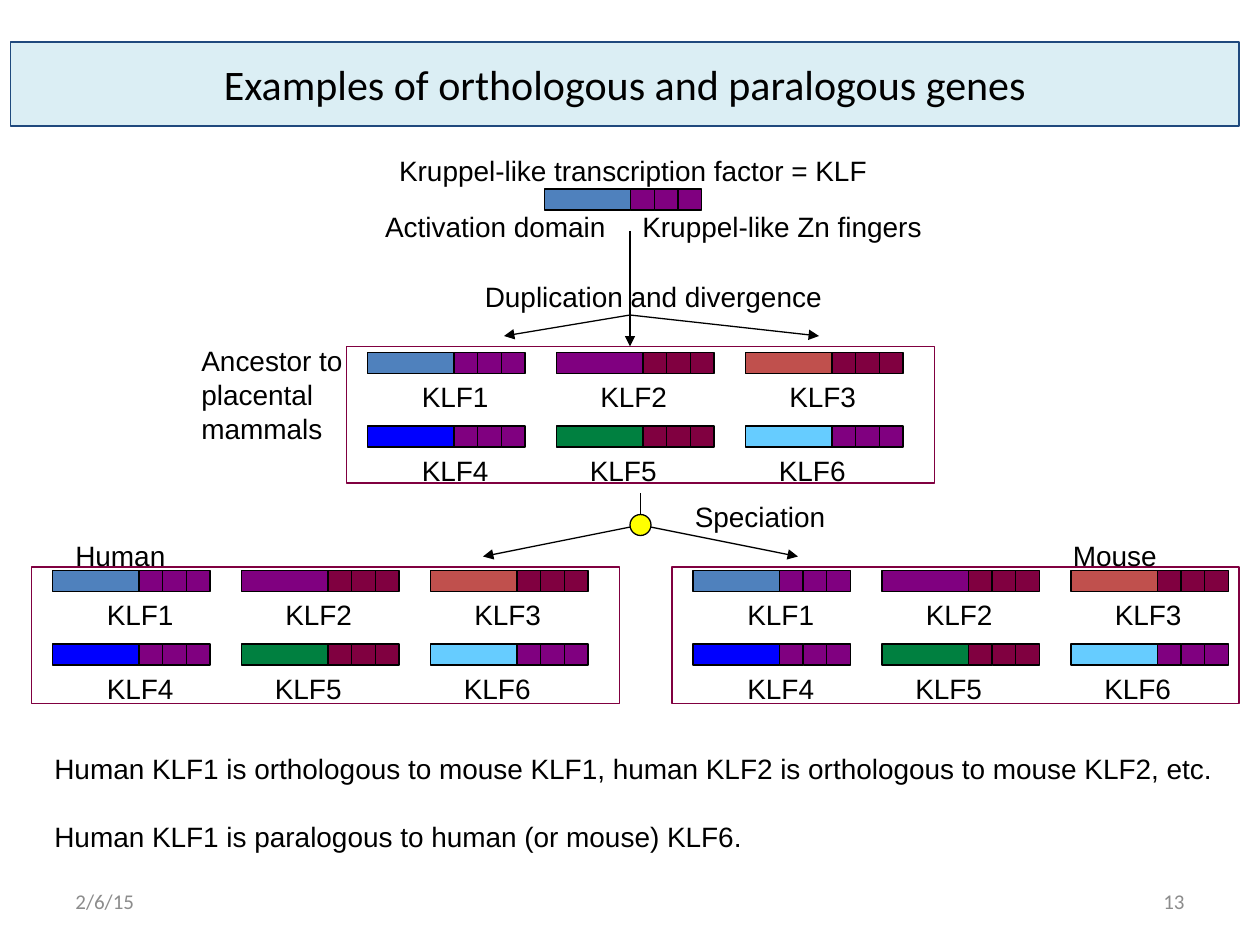
from dataclasses import dataclass

from lxml import etree
from pptx import Presentation
from pptx.dml.color import RGBColor
from pptx.enum.shapes import MSO_CONNECTOR, MSO_SHAPE
from pptx.enum.text import MSO_ANCHOR, PP_ALIGN
from pptx.oxml.ns import qn
from pptx.util import Pt

RECTANGLE = MSO_SHAPE.RECTANGLE
OVAL = MSO_SHAPE.OVAL
STRAIGHT = MSO_CONNECTOR.STRAIGHT
TOP, MIDDLE = MSO_ANCHOR.TOP, MSO_ANCHOR.MIDDLE
LEFT, CENTER, RIGHT = PP_ALIGN.LEFT, PP_ALIGN.CENTER, PP_ALIGN.RIGHT


@dataclass(frozen=True)
class Theme:
    ink: str = "000000"
    muted: str = "8C8C8C"
    banner: str = "DBEEF4"
    banner_line: str = "1F497D"
    blue: str = "4F81BD"
    purple: str = "800080"
    maroon: str = "800040"
    red: str = "C0504D"
    bright_blue: str = "0000FF"
    green: str = "008040"
    sky: str = "66CCFF"
    yellow: str = "FFFF00"
    body_font: str = "Arial"
    heading_font: str = "Calibri"
    title_size: float = 24
    body_size: float = 16
    footer_size: float = 12
    thin: float = 0.75


THEME = Theme()
GENES = [
    [("KLF1", THEME.blue, THEME.purple, 36),
     ("KLF2", THEME.purple, THEME.maroon, 138),
     ("KLF3", THEME.red, THEME.maroon, 246)],
    [("KLF4", THEME.bright_blue, THEME.purple, 36),
     ("KLF5", THEME.green, THEME.maroon, 132),
     ("KLF6", THEME.sky, THEME.purple, 240)],
]
GENE_PITCH, ROW_PITCH, GENE_INSET = 108, 42, 12
ACTIVATION_WIDTH, FINGER_WIDTH, GENE_HEIGHT = 49.5, 13.5, 12
LABEL_WIDTH, LABEL_HEIGHT = 52.5, 26.6


def apply_format(target, values):
    for name, value in values.items():
        setattr(target, name, value)


def write_text(shape, lines, size=THEME.body_size, font=THEME.body_font,
               color=THEME.ink, align=LEFT, anchor=TOP, wrap=False, gap=0):
    frame = shape.text_frame
    apply_format(frame, {"word_wrap": wrap, "vertical_anchor": anchor})
    for index, line in enumerate(lines):
        paragraph = frame.paragraphs[0] if index == 0 else frame.add_paragraph()
        apply_format(paragraph, {"text": line, "alignment": align,
                                 "space_before": Pt(gap if index else 0)})
        apply_format(paragraph.font, {"size": Pt(size), "name": font})
        paragraph.font.color.rgb = RGBColor.from_string(color)


def add_text(slide, box, *lines, **style):
    write_text(slide.shapes.add_textbox(*map(Pt, box)), lines, **style)


def add_block(shapes, box, fill=None, line=THEME.ink, width=THEME.thin, kind=RECTANGLE):
    shape = shapes.add_shape(kind, *map(Pt, box))
    shape.shadow.inherit = False
    if fill:
        shape.fill.solid()
        shape.fill.fore_color.rgb = RGBColor.from_string(fill)
    else:
        shape.fill.background()
    shape.line.color.rgb = RGBColor.from_string(line)
    shape.line.width = Pt(width)
    return shape


def add_line(slide, start, end, arrow=True):
    connector = slide.shapes.add_connector(STRAIGHT, *map(Pt, (*start, *end)))
    connector.line.color.rgb = RGBColor.from_string(THEME.ink)
    connector.line.width = Pt(THEME.thin)
    if arrow:
        etree.SubElement(connector.line._get_or_add_ln(), qn("a:tailEnd"), type="triangle")
    etree.SubElement(connector._element.spPr, qn("a:effectLst"))


def add_gene(slide, left, top, domain, finger):
    group = slide.shapes.add_group_shape()
    for index in range(3):
        finger_left = left + ACTIVATION_WIDTH + index * FINGER_WIDTH
        add_block(group.shapes, (finger_left, top, FINGER_WIDTH, GENE_HEIGHT), finger)
    add_block(group.shapes, (left, top, ACTIVATION_WIDTH, GENE_HEIGHT), domain)


def add_gene_panel(slide, box, top_inset):
    left, top = box[:2]
    for row, genes in enumerate(GENES):
        gene_top = top + top_inset + row * ROW_PITCH
        for column, (name, domain, finger, label_left) in enumerate(genes):
            add_gene(slide, left + GENE_INSET + column * GENE_PITCH, gene_top, domain, finger)
            add_text(slide, (left + label_left, gene_top + GENE_HEIGHT,
                             LABEL_WIDTH, LABEL_HEIGHT), name)
    add_block(slide.shapes, box, line=THEME.maroon)


def add_title(slide, box):
    banner = add_block(slide.shapes, box, THEME.banner, THEME.banner_line, 1)
    write_text(banner, ["Examples of orthologous and paralogous genes"], THEME.title_size,
               THEME.heading_font, align=CENTER, anchor=MIDDLE, wrap=True)


def add_family(slide, box):
    left, top = box[:2]
    add_text(slide, (left + 8, top, 283, LABEL_HEIGHT), "Kruppel-like transcription factor = KLF")
    add_gene(slide, left + 98, top + 24, THEME.blue, THEME.purple)
    add_text(slide, (left, top + 32, 140.5, LABEL_HEIGHT), "Activation domain")
    add_text(slide, (left + 147, top + 32, 175, LABEL_HEIGHT), "Kruppel-like Zn fingers")


def add_duplication(slide, box):
    left, top, width, height = box
    fork = (left + 72, top + 48)
    add_line(slide, (fork[0], top), fork, arrow=False)
    for end in ((left, top + 60), (fork[0], top + height), (left + width, top + 60)):
        add_line(slide, fork, end)
    add_text(slide, (left - 18, top + 24, 207.5, LABEL_HEIGHT), "Duplication and divergence")


def add_speciation(slide, box):
    left, top, width, height = box
    center = (left + width / 2, top + 18)
    add_line(slide, (center[0], top), center, arrow=False)
    for end_left in (left, left + width):
        add_line(slide, center, (end_left, top + height))
    add_block(slide.shapes, (center[0] - 6, center[1] - 6, 12, 12), THEME.yellow, kind=OVAL)
    add_text(slide, (center[0] + 24, top, 89, LABEL_HEIGHT), "Speciation")


def add_footer(slide, box):
    left, top, width, height = box
    style = {"size": THEME.footer_size, "font": THEME.heading_font,
             "color": THEME.muted, "anchor": MIDDLE, "wrap": True}
    add_text(slide, (left, top, 168, height), "2/6/15", **style)
    add_text(slide, (left + width - 168, top, 168, height), "13", align=RIGHT, **style)


def main():
    presentation = Presentation()
    apply_format(presentation, {"slide_width": Pt(720), "slide_height": Pt(540)})
    slide = presentation.slides.add_slide(presentation.slide_layouts[6])
    add_title(slide, (6, 24, 702, 48))
    add_family(slide, (213, 84, 322, 59))
    add_gene_panel(slide, (198, 198, 336, 78), 3.5)
    add_gene_panel(slide, (18, 324, 336, 78), 2)
    add_gene_panel(slide, (384, 324, 324, 78), 2)
    add_duplication(slide, (288, 132, 180, 66))
    add_speciation(slide, (276, 282, 180, 36))
    add_text(slide, (36, 304, 66, LABEL_HEIGHT), "Human")
    add_text(slide, (606, 304, 62.5, LABEL_HEIGHT), "Mouse")
    add_text(slide, (108, 193, 96, 65), "Ancestor to", "placental mammals", wrap=True)
    add_text(slide, (24, 426, 678, 65),
             "Human KLF1 is orthologous to mouse KLF1, human KLF2 is orthologous to mouse KLF2, etc.",
             "Human KLF1 is paralogous to human (or mouse) KLF6.", gap=19.5)
    add_footer(slide, (36, 500.5, 648, 28.75))
    presentation.save("out.pptx")


if __name__ == "__main__":
    main()
